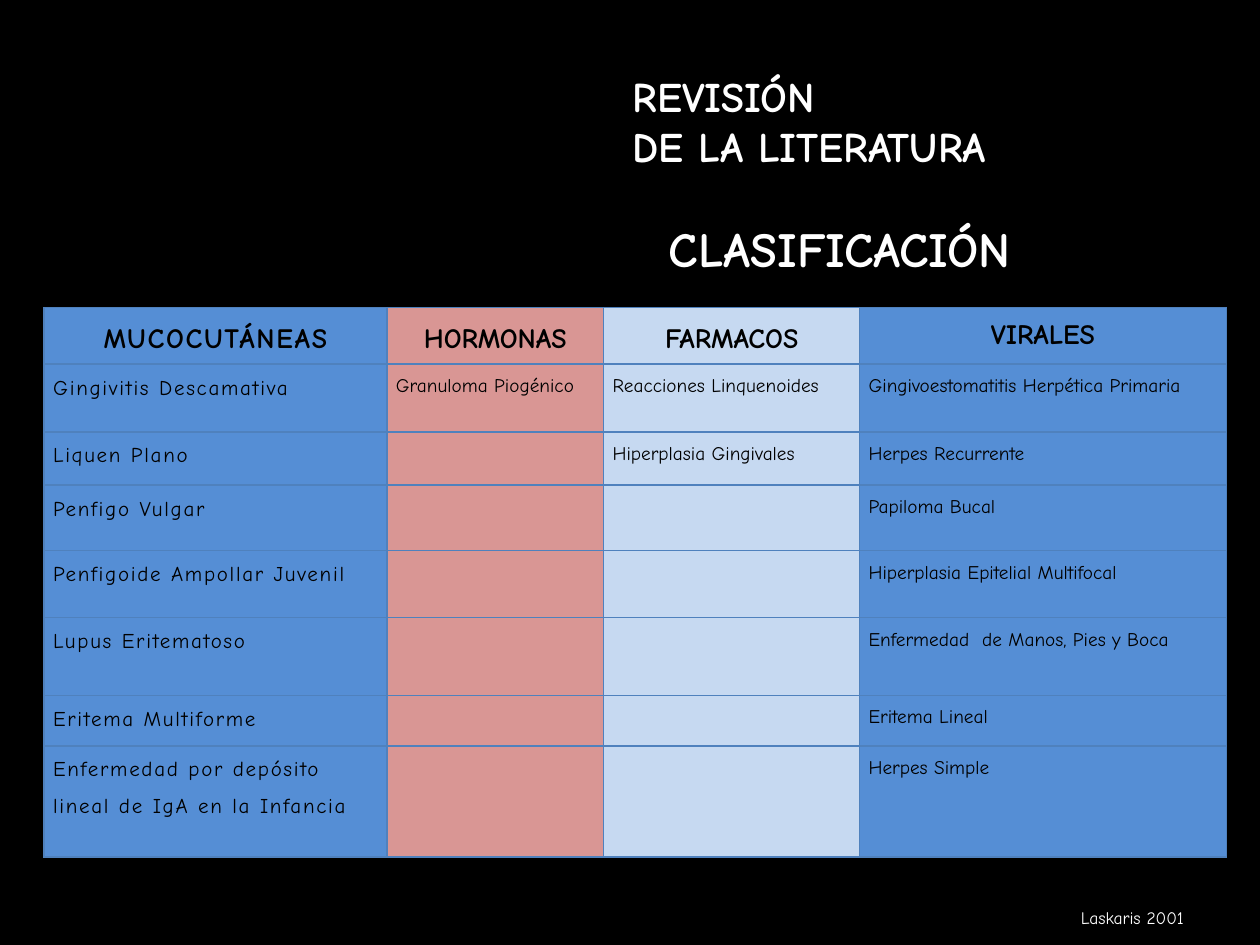
from lxml import etree
from pptx import Presentation
from pptx.dml.color import RGBColor
from pptx.enum.text import MSO_ANCHOR, MSO_AUTO_SIZE, PP_ALIGN
from pptx.oxml.ns import qn
from pptx.util import Cm, Pt

LEFT, CENTER, JUSTIFY = PP_ALIGN.LEFT, PP_ALIGN.CENTER, PP_ALIGN.JUSTIFY
MIDDLE, TOP = MSO_ANCHOR.MIDDLE, MSO_ANCHOR.TOP
NO_FIT = MSO_AUTO_SIZE.NONE

TITLE = ["REVISIÓN", "DE LA LITERATURA"]
SUBTITLE = ["CLASIFICACIÓN"]
SOURCE = ["Laskaris 2001"]

# Heading, column width in cm, fill, entries from the top row down
COLUMNS = [
    ("MUCOCUTÁNEAS", 6.91, "blue", [
        "Gingivitis Descamativa", "Liquen Plano", "Penfigo Vulgar",
        "Penfigoide Ampollar Juvenil", "Lupus Eritematoso",
        "Eritema Multiforme",
        "Enfermedad por depósito lineal de IgA en la Infancia"]),
    ("HORMONAS", 4.37, "rose", ["Granuloma Piogénico"]),
    ("FARMACOS", 5.16, "pale", [
        "Reacciones Linquenoides", "Hiperplasia Gingivales"]),
    ("VIRALES", 7.39, "blue", [
        "Gingivoestomatitis Herpética Primaria", "Herpes Recurrente",
        "Papiloma Bucal", "Hiperplasia Epitelial Multifocal",
        "Enfermedad  de Manos, Pies y Boca", "Eritema Lineal",
        "Herpes Simple"]),
]
ROWS = [1.14, 1.37, 1.07, 1.32, 1.35, 1.57, 1.02, 2.24]

THEME = {
    "font": "Comic Neue",
    "black": "000000", "white": "FFFFFF", "line": "4F81BD",
    "blue": "558ED5", "rose": "D99694", "pale": "C6D9F1",
    "title": 24, "subtitle": 28, "head": 16, "first": 12, "entry": 11,
    "source": 10,
}


def color(name):
    return RGBColor.from_string(THEME[name])


def write(frame, lines, size, ink="white", bold=False, align=LEFT,
          leading=None, track=0):
    """Fill a text frame, one paragraph per line; track is in points."""
    for i, line in enumerate(lines):
        para = frame.add_paragraph() if i else frame.paragraphs[0]
        para.alignment = align
        if leading:
            para.line_spacing = leading
        run = para.add_run()
        run.text = line
        font = run.font
        font.name, font.size, font.bold = THEME["font"], Pt(THEME[size]), bold
        font.color.rgb = color(ink)
        if track:
            run._r.get_or_add_rPr().set("spc", str(track * 100))


def add_label(slide, place, lines, size, **style):
    frame = slide.shapes.add_textbox(*map(Cm, place)).text_frame
    frame.word_wrap = True
    write(frame, lines, size, **style)


def add_border(cell):
    props = cell._tc.get_or_add_tcPr()
    for side in ("lnL", "lnR", "lnT", "lnB"):
        line = etree.SubElement(props, qn("a:" + side), w=str(Pt(1)))
        fill = etree.SubElement(line, qn("a:solidFill"))
        etree.SubElement(fill, qn("a:srgbClr"), val=THEME["line"])


def format_cell(cell, fill):
    add_border(cell)  # border elements must come before the fill
    cell.fill.solid()
    cell.fill.fore_color.rgb = color(fill)
    cell.margin_left = cell.margin_right = Cm(0.18)
    cell.margin_top = cell.margin_bottom = 0


def add_grid(slide):
    width = sum(col[1] for col in COLUMNS)
    table = slide.shapes.add_table(
        len(ROWS), len(COLUMNS), Cm(0.89), Cm(6.2), Cm(width),
        Cm(sum(ROWS))).table
    table.first_row = table.horz_banding = False
    for row, height in zip(table.rows, ROWS):
        row.height = Cm(height)
    last = len(COLUMNS) - 1
    for c, (head, wide, fill, entries) in enumerate(COLUMNS):
        table.columns[c].width = Cm(wide)
        for r in range(len(ROWS)):
            format_cell(table.cell(r, c), fill)
        top = table.cell(0, c)
        top.vertical_anchor = MIDDLE if c == last else TOP
        track = 1 if c == 0 else 0
        write(top.text_frame, [head], "head", "black", True, CENTER,
              1 if c == last else 1.5, track)
        for r, entry in enumerate(entries, 1):
            write(table.cell(r, c).text_frame, [entry],
                  "entry" if c else "first", "black",
                  align=JUSTIFY if c else LEFT, leading=1.5, track=track)


def add_title(slide):
    title = slide.shapes.title
    title.left, title.top, title.width, title.height = map(
        Cm, (12.5, 0.84, 11.91, 3.18))
    frame = title.text_frame
    frame.auto_size, frame.vertical_anchor = NO_FIT, MIDDLE
    write(frame, TITLE, "title", bold=True)


def main():
    deck = Presentation()
    deck.slide_width, deck.slide_height = Cm(25.4), Cm(19.05)
    slide = deck.slides.add_slide(deck.slide_layouts[5])
    back = slide.background.fill
    back.solid()
    back.fore_color.rgb = color("black")
    add_label(slide, (21.54, 18.16, 3.48, 0.69), SOURCE, "source")
    add_grid(slide)
    add_title(slide)
    add_label(slide, (12.37, 4.29, 9.12, 1.45), SUBTITLE, "subtitle",
              bold=True, align=CENTER)
    deck.save("out.pptx")


if __name__ == "__main__":
    main()
